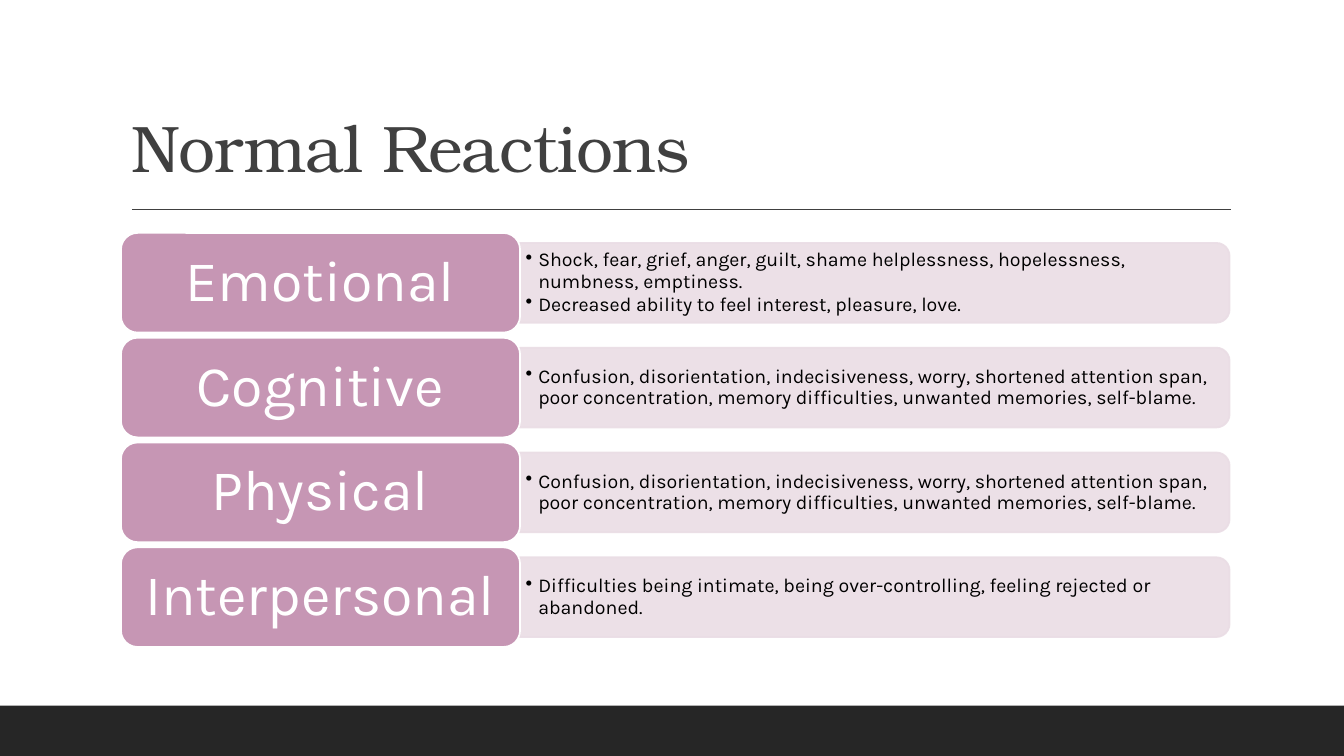
from dataclasses import dataclass

from lxml.etree import SubElement
from pptx import Presentation
from pptx.dml.color import RGBColor
from pptx.enum.shapes import MSO_CONNECTOR, MSO_SHAPE
from pptx.enum.text import MSO_ANCHOR, MSO_AUTO_SIZE, PP_ALIGN
from pptx.oxml.ns import qn
from pptx.util import Pt


@dataclass(frozen=True)
class Theme:
    """Colours, fonts and type sizes of the slide."""
    ink: RGBColor = RGBColor(0x40, 0x40, 0x40)
    band: RGBColor = RGBColor(0x26, 0x26, 0x26)
    tile: RGBColor = RGBColor(0xC6, 0x96, 0xB4)
    panel: RGBColor = RGBColor(0xEA, 0xDD, 0xE5)
    white: RGBColor = RGBColor(0xFF, 0xFF, 0xFF)
    black: RGBColor = RGBColor(0x00, 0x00, 0x00)
    heading_font: str = "TeX Gyre Bonum"
    body_font: str = "Karla"
    title_size: int = 47
    label_size: int = 41
    detail_size: int = 14


THEME = Theme()

TILE_LEFT, TILE_TOP, TILE_WIDTH, TILE_HEIGHT = 86.4, 166.4, 285.1, 71.2
ROW_PITCH = 74.85
PANEL_LEFT, PANEL_WIDTH, PANEL_HEIGHT = 371.3, 507, 57
DETAIL_WIDTH, DETAIL_HEIGHT = 504, 51

CONFUSION = ("Confusion, disorientation, indecisiveness, worry, shortened attention span, "
             "poor concentration, memory difficulties, unwanted memories, self-blame.")
REACTIONS = [
    ("Emotional", [
        "Shock, fear, grief, anger, guilt, shame helplessness, hopelessness, numbness, emptiness.",
        "Decreased ability to feel interest, pleasure, love."]),
    ("Cognitive", [CONFUSION]),
    ("Physical", [CONFUSION]),
    ("Interpersonal", [
        "Difficulties being intimate, being over-controlling, feeling rejected or abandoned."]),
]


def style_paragraph(paragraph, font_name, size, color):
    """Set the line spacing and font of a paragraph."""
    paragraph.line_spacing = 0.9
    paragraph.font.name = font_name
    paragraph.font.size = Pt(size)
    paragraph.font.color.rgb = color


def set_insets(frame, horizontal, vertical):
    """Set the inner margins of a wrapped, vertically centred text frame."""
    frame.word_wrap = True
    frame.vertical_anchor = MSO_ANCHOR.MIDDLE
    frame.margin_left = frame.margin_right = Pt(horizontal)
    frame.margin_top = frame.margin_bottom = Pt(vertical)


def add_filled(slide, preset, left, top, width, height, fill, outline=None):
    """Add a flat preset shape with an optional outline."""
    shape = slide.shapes.add_shape(preset, Pt(left), Pt(top), Pt(width), Pt(height))
    shape.shadow.inherit = False
    shape.fill.solid()
    shape.fill.fore_color.rgb = fill
    if outline is None:
        shape.line.fill.background()
    else:
        shape.line.color.rgb = outline
        shape.line.width = Pt(1.25)
    return shape


def add_title(slide, wording):
    """Place and format the title placeholder."""
    title = slide.shapes.title
    title.left, title.top, title.width, title.height = Pt(86.4), Pt(22.4), Pt(792), Pt(114.4)
    frame = title.text_frame
    frame.text = wording
    frame.auto_size = MSO_AUTO_SIZE.NONE
    frame.vertical_anchor = MSO_ANCHOR.BOTTOM
    heading = frame.paragraphs[0]
    heading.alignment = PP_ALIGN.LEFT
    style_paragraph(heading, THEME.heading_font, THEME.title_size, THEME.ink)
    heading._p.pPr.find(qn("a:defRPr")).set("spc", "-50")


def add_rule(slide):
    """Draw the thin line under the title."""
    rule = slide.shapes.add_connector(
        MSO_CONNECTOR.STRAIGHT, Pt(94.3), Pt(149.6), Pt(879), Pt(149.6))
    rule.line.color.rgb = THEME.ink
    rule.line.width = Pt(1)
    SubElement(rule._element.spPr, qn("a:effectLst"))


def add_panel(slide, middle):
    """Add the pale panel, turned so that its right corners are round."""
    panel = add_filled(
        slide, MSO_SHAPE.ROUND_2_SAME_RECTANGLE,
        PANEL_LEFT + (PANEL_WIDTH - PANEL_HEIGHT) / 2, middle - PANEL_WIDTH / 2,
        PANEL_HEIGHT, PANEL_WIDTH, THEME.panel, THEME.panel)
    panel.rotation = 90
    for color in panel._element.spPr.iter(qn("a:srgbClr")):
        SubElement(color, qn("a:alpha"), val="90000")


def add_details(slide, middle, details):
    """Add the bulleted list that lies on a panel."""
    box = slide.shapes.add_textbox(
        Pt(PANEL_LEFT), Pt(middle - DETAIL_HEIGHT / 2), Pt(DETAIL_WIDTH), Pt(DETAIL_HEIGHT))
    frame = box.text_frame
    set_insets(frame, 4.2, 2.1)
    frame.text = "\n".join(details)
    for detail in frame.paragraphs:
        detail.level = 1
        detail.space_after = Pt(1.5)
        properties = detail._p.get_or_add_pPr()
        properties.set("marL", str(Pt(9)))
        properties.set("indent", str(Pt(-9)))
        SubElement(properties, qn("a:buChar"), char="•")
        style_paragraph(detail, THEME.body_font, THEME.detail_size, THEME.black)


def add_tile(slide, top, label):
    """Add the rounded tile that names a kind of reaction."""
    tile = add_filled(slide, MSO_SHAPE.ROUNDED_RECTANGLE, TILE_LEFT, top,
                      TILE_WIDTH, TILE_HEIGHT, THEME.tile, THEME.white)
    frame = tile.text_frame
    set_insets(frame, 12, 6)
    frame.text = label
    frame.paragraphs[0].alignment = PP_ALIGN.CENTER
    style_paragraph(frame.paragraphs[0], THEME.body_font, THEME.label_size, THEME.white)


def main():
    """Build and save the slide."""
    presentation = Presentation()
    presentation.slide_width, presentation.slide_height = Pt(960), Pt(540)
    slide = presentation.slides.add_slide(presentation.slide_layouts[5])
    add_filled(slide, MSO_SHAPE.RECTANGLE, 0, 504, 960, 36, THEME.band)
    add_rule(slide)
    add_title(slide, "Normal Reactions")
    for row, (label, details) in enumerate(REACTIONS):
        top = TILE_TOP + row * ROW_PITCH
        middle = top + TILE_HEIGHT / 2
        add_panel(slide, middle)
        add_details(slide, middle, details)
        add_tile(slide, top, label)
    presentation.save("out.pptx")


if __name__ == "__main__":
    main()
